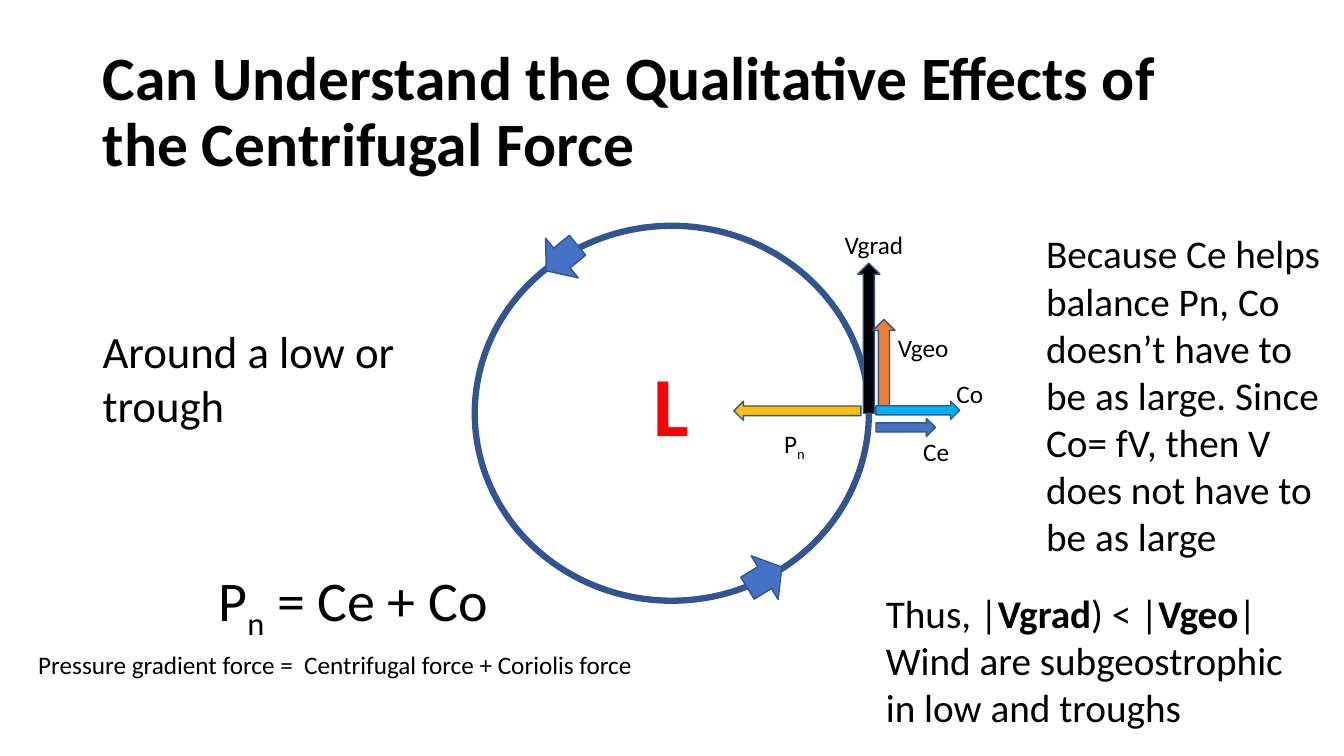
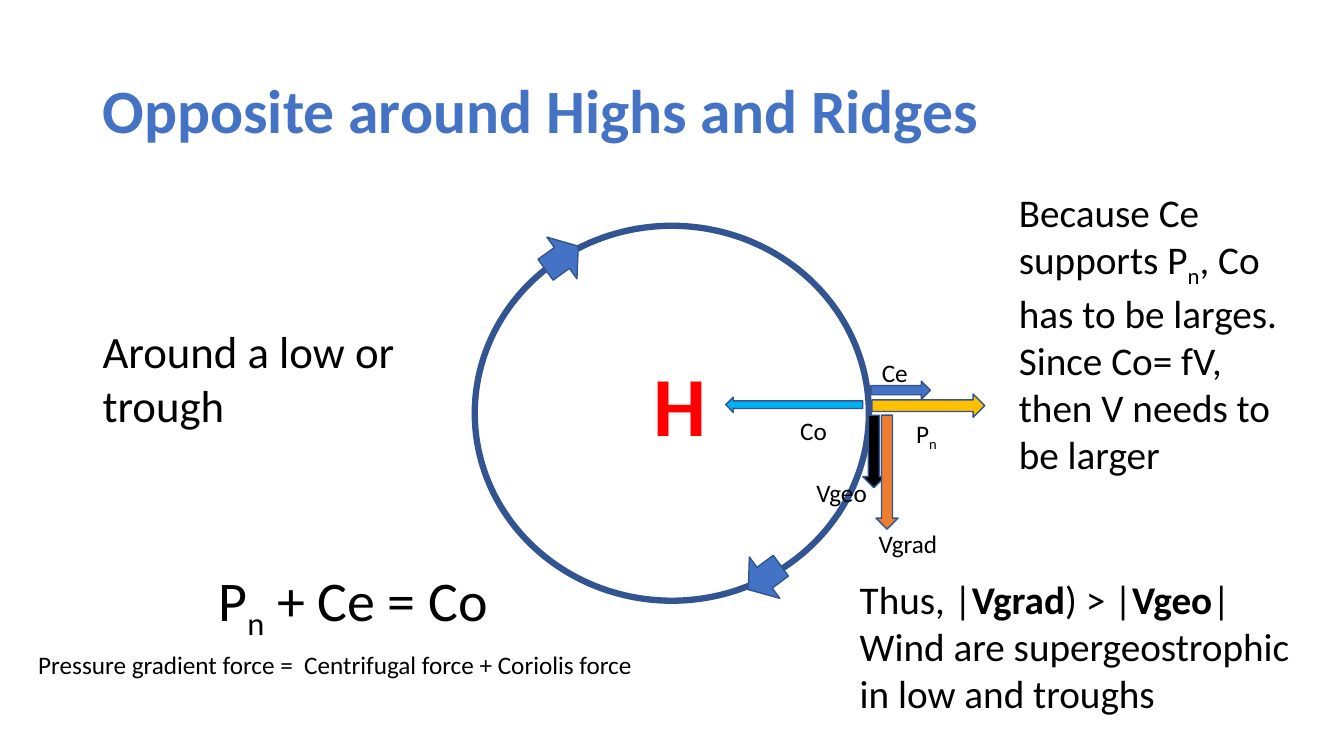
from dataclasses import dataclass

from pptx import Presentation
from pptx.dml.color import RGBColor
from pptx.enum.shapes import MSO_SHAPE as Preset
from pptx.enum.text import MSO_ANCHOR as Anchor, MSO_AUTO_SIZE as AutoSize, PP_ALIGN as Align
from pptx.util import Pt


@dataclass(frozen=True)
class Theme:
    font: str = "Calibri"
    black: str = "000000"
    blue: str = "4472C4"
    outline: str = "325491"
    red: str = "FF0000"
    orange: str = "ED7D31"
    gold: str = "FFC000"
    sky: str = "00B0F0"
    title_size: int = 44
    center_size: int = 60
    equation_size: int = 40
    region_size: int = 32
    note_size: int = 28
    label_size: int = 18
    arrow_line: float = 1
    circle_line: float = 4.5


THEME = Theme()
SUB_N = ("n", "sub")
PRESSURE = ["P", SUB_N]
LABEL_WIDTHS = {"Vgrad": 56.9, "Vgeo": 51.1, "Pn": 30.2, "Co": 33.8, "Ce": 33.1}
LABEL_HEIGHT = 28.8


class ForceDeck:
    def __init__(self, theme):
        self.theme = theme
        self.deck = Presentation()
        self.deck.slide_width, self.deck.slide_height = Pt(960), Pt(540)
        self.page = None

    def add_page(self, title, color):
        self.page = self.deck.slides.add_slide(self.deck.slide_layouts[5])
        box = self.page.shapes.title
        box.left, box.top, box.width, box.height = map(Pt, (66.2, 28.8, 828, 104.4))
        frame = box.text_frame
        frame.auto_size = AutoSize.NONE
        frame.vertical_anchor = Anchor.MIDDLE
        para = frame.paragraphs[0]
        para.alignment = Align.LEFT
        para.line_spacing = 0.9
        self.add_span(para, (title, "bold"), self.theme.title_size, color)

    def add_span(self, para, content, size, color):
        text, style = (content, "") if isinstance(content, str) else content
        span = para.add_run()
        span.text = text
        font = span.font
        font.name = self.theme.font
        font.size = Pt(size)
        font.bold = style == "bold"
        font.color.rgb = RGBColor.from_string(color)
        if style == "sub":
            font._element.set("baseline", "-25000")

    def add_text(self, place, paragraphs, size, color=None, wrap=False):
        box = self.page.shapes.add_textbox(*map(Pt, place))
        frame = box.text_frame
        frame.word_wrap = wrap
        frame.auto_size = AutoSize.SHAPE_TO_FIT_TEXT
        for index, spans in enumerate(paragraphs):
            para = frame.add_paragraph() if index else frame.paragraphs[0]
            for content in spans:
                self.add_span(para, content, size, color or self.theme.black)

    def add_note(self, place, paragraphs):
        self.add_text(place, paragraphs, self.theme.note_size, wrap=True)

    def add_label(self, name, left, top):
        spans = PRESSURE if name == "Pn" else [name]
        place = left, top, LABEL_WIDTHS[name], LABEL_HEIGHT
        self.add_text(place, [spans], self.theme.label_size)

    def add_outlined(self, preset, place, fill=None, line=None, rotation=0):
        shape = self.page.shapes.add_shape(preset, *map(Pt, place))
        shape.shadow.inherit = False
        shape.rotation = rotation
        if fill:
            shape.fill.solid()
            shape.fill.fore_color.rgb = RGBColor.from_string(fill)
        else:
            shape.fill.background()
        shape.line.color.rgb = RGBColor.from_string(self.theme.outline)
        shape.line.width = Pt(line or self.theme.arrow_line)

    def add_flow(self, center, lower_turn, upper_turn):
        theme = self.theme
        self.add_outlined(Preset.OVAL, (339.1, 161.3, 281.5, 267.8), line=theme.circle_line)
        self.add_text((460, 248.4, 46, 79.9), [[(center, "bold")]], theme.center_size, theme.red)
        for left, top, turn in ((527.8, 398.2, lower_turn), (383, 169.9, upper_turn)):
            self.add_outlined(Preset.UP_ARROW, (left, top, 36.7, 28.8), theme.blue, rotation=turn)

    def add_balance(self, equation):
        theme = self.theme
        self.add_text((66.2, 227.5, 225.4, 85), [["Around a low or"], ["trough"]], theme.region_size)
        self.add_text((149, 400.3, 217.4, 55.4), [PRESSURE + [equation]], theme.equation_size)
        meaning = "Pressure gradient force =  Centrifugal force + Coriolis force"
        self.add_text((20.2, 460.1, 439.9, 28.8), [[meaning]], theme.label_size)

    def add_conclusion(self, place, sign, wind):
        self.add_note(place, [
            ["Thus, |", ("Vgrad", "bold"), f") {sign} |", ("Vgeo", "bold"), "|"],
            [f"Wind are {wind} in low and troughs"],
        ])


PAGES = [
    {
        "title": ("Can Understand the Qualitative Effects of the Centrifugal Force", THEME.black),
        "flow": ("L", 58.3, 230.5),
        "arrows": [
            (Preset.UP_ARROW, (612.7, 187.9, 15.8, 107.3), THEME.black),
            (Preset.UP_ARROW, (623.5, 228.2, 15.8, 67.7), THEME.orange),
            (Preset.LEFT_ARROW, (524.2, 286.6, 90.7, 13.7), THEME.gold),
            (Preset.RIGHT_ARROW, (625.7, 298.8, 42.5, 13), THEME.blue),
            (Preset.RIGHT_ARROW, (625.7, 286.6, 59.8, 13), THEME.sky),
        ],
        "labels": [
            ("Vgrad", 596.2, 160.6),
            ("Vgeo", 634.3, 234),
            ("Pn", 553, 302.4),
            ("Co", 676.1, 266.4),
            ("Ce", 652.3, 308.2),
        ],
        "equation": " = Ce + Co",
        "reason": ((740.2, 160.6, 213.1, 244.8), [[
            "Because Ce helps balance Pn, Co doesn’t have to be as large. "
            "Since Co= fV, then V does not have to be as large",
        ]]),
        "conclusion": ((625.7, 417.6, 313.9, 108.7), "<", "subgeostrophic"),
    },
    {
        "title": ("Opposite around Highs and Ridges", THEME.blue),
        "flow": ("H", 233.7, 54.2),
        "arrows": [
            (Preset.DOWN_ARROW, (616.3, 296.6, 15.8, 51.8), THEME.black),
            (Preset.DOWN_ARROW, (625.7, 296.6, 15.8, 81.4), THEME.orange),
            (Preset.RIGHT_ARROW, (622.8, 281.5, 80.6, 16.6), THEME.gold),
            (Preset.RIGHT_ARROW, (622.1, 272.2, 42.5, 13), THEME.blue),
            (Preset.LEFT_ARROW, (518.4, 283.7, 97.9, 10.8), THEME.sky),
        ],
        "labels": [
            ("Vgrad", 620.6, 373.7),
            ("Vgeo", 576, 337.7),
            ("Pn", 647.3, 295.2),
            ("Co", 564.5, 293),
            ("Ce", 622.8, 252),
        ],
        "equation": " + Ce = Co",
        "reason": ((720.7, 131, 213.1, 211), [[
            "Because Ce supports P", SUB_N,
            ", Co has to be larges. Since Co= fV, then V needs to be larger",
        ]]),
        "conclusion": ((607, 407.5, 332.6, 108.7), ">", "supergeostrophic"),
    },
]


def main():
    forces = ForceDeck(THEME)
    for content in PAGES:
        forces.add_page(*content["title"])
        forces.add_flow(*content["flow"])
        for arrow in content["arrows"]:
            forces.add_outlined(*arrow)
        for label in content["labels"]:
            forces.add_label(*label)
        forces.add_balance(content["equation"])
        forces.add_note(*content["reason"])
        forces.add_conclusion(*content["conclusion"])
    forces.deck.save("out.pptx")


if __name__ == "__main__":
    main()
